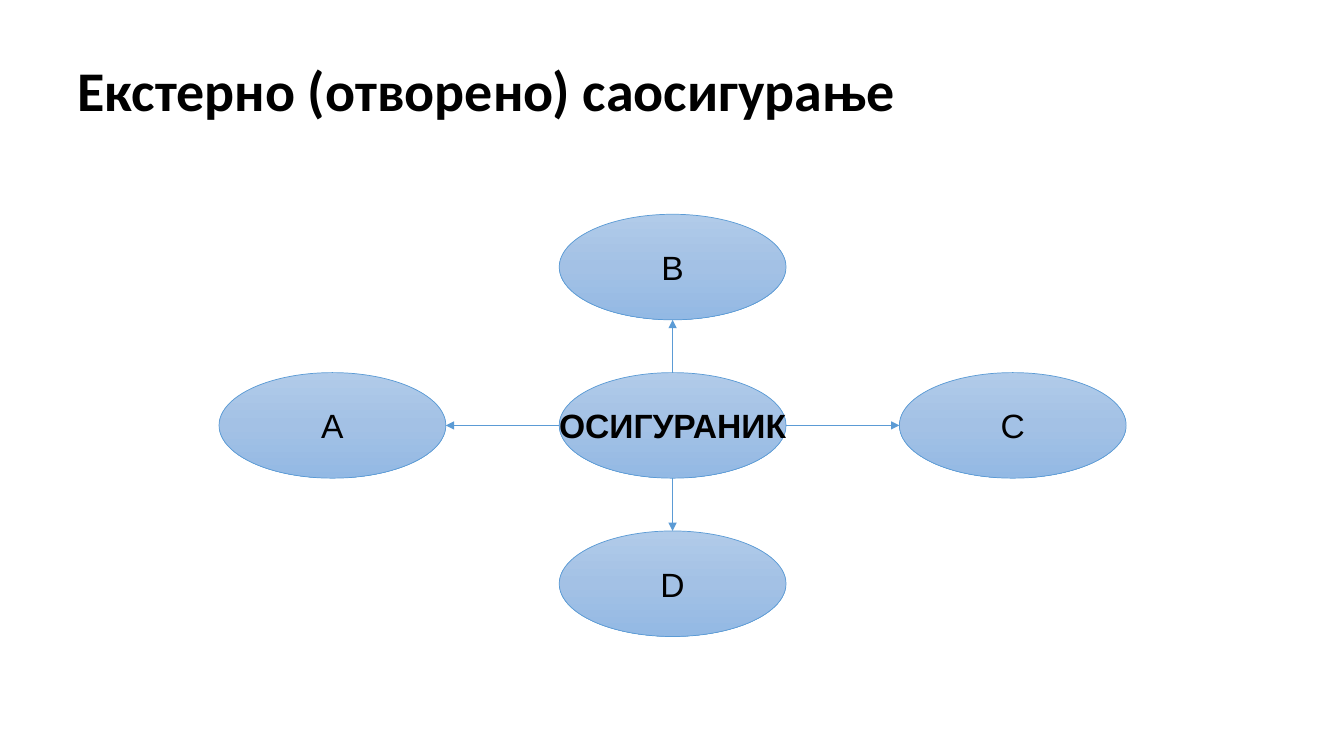
from copy import deepcopy

from lxml import etree
from pptx import Presentation
from pptx.dml.color import RGBColor
from pptx.enum.shapes import MSO_CONNECTOR, MSO_SHAPE
from pptx.enum.text import MSO_ANCHOR, MSO_AUTO_SIZE, PP_ALIGN
from pptx.oxml.ns import qn
from pptx.util import Cm, Pt

ELLIPSE = MSO_SHAPE.OVAL
STRAIGHT = MSO_CONNECTOR.STRAIGHT
MIDDLE = MSO_ANCHOR.MIDDLE
NO_FIT = MSO_AUTO_SIZE.NONE
LEFT, CENTER = PP_ALIGN.LEFT, PP_ALIGN.CENTER

BLACK, BLUE = "000000", "5B9BD5"
GRADIENT = [(0, "B1CBE9"), (0.5, "A3C1E5"), (1, "93B9E4")]
INSURED = "ОСИГУРАНИК"
INSURERS = [("B", 0, -1), ("C", 1, 0), ("D", 0, 1), ("A", -1, 0)]


def color(hex_code):
    """Return the colour for a hex string."""
    return RGBColor.from_string(hex_code)


def write(shape, text, *, size, font, bold=False, align=LEFT, spacing=1.0):
    """Write one formatted, vertically centred paragraph into a shape."""
    frame = shape.text_frame
    frame.auto_size = NO_FIT
    frame.vertical_anchor = MIDDLE
    para = frame.paragraphs[0]
    para.alignment = align
    para.line_spacing = spacing
    span = para.add_run()
    span.text = text
    span.font.size = Pt(size)
    span.font.name = font
    span.font.bold = bold
    span.font.color.rgb = color(BLACK)


def outline(line):
    """Give a line the thin blue stroke."""
    line.color.rgb = color(BLUE)
    line.width = Pt(0.5)


def add_title(page, text, left, top, width, height):
    """Place and fill the title placeholder."""
    title = page.shapes.title
    title.left, title.top = Cm(left), Cm(top)
    title.width, title.height = Cm(width), Cm(height)
    write(title, text, size=40, font="Calibri", bold=True, spacing=0.9)


def add_node(page, text, center_x, center_y, width, height, bold=False):
    """Draw a labelled gradient ellipse around a centre."""
    node = page.shapes.add_shape(
        ELLIPSE, Cm(center_x - width / 2), Cm(center_y - height / 2),
        Cm(width), Cm(height))
    node.shadow.inherit = False
    node.fill.gradient()
    node.fill.gradient_angle = 270
    stop_list = node._element.spPr.find(".//" + qn("a:gsLst"))
    stop_list.insert(1, deepcopy(stop_list[0]))
    for stop, (position, hex_code) in zip(node.fill.gradient_stops, GRADIENT):
        stop.position = position
        stop.color.rgb = color(hex_code)
    outline(node.line)
    frame = node.text_frame
    frame.margin_left = frame.margin_right = 0
    frame.margin_top = frame.margin_bottom = 0
    frame.word_wrap = False
    write(node, text, size=24, font="Arial", bold=bold, align=CENTER)


def add_arrow(page, start_x, start_y, end_x, end_y):
    """Draw a thin arrow between two points."""
    arrow = page.shapes.add_connector(
        STRAIGHT, Cm(start_x), Cm(start_y), Cm(end_x), Cm(end_y))
    outline(arrow.line)
    etree.SubElement(arrow.line._get_or_add_ln(), qn("a:tailEnd"), type="triangle")
    etree.SubElement(arrow._element.spPr, qn("a:effectLst"))


def add_radial_diagram(page, left, top, width, height):
    """Draw the insured in the middle of a box with the insurers around it."""
    center_x, center_y = left + width / 2, top + height / 2
    node_width, node_height = width / 4, height / 4
    for name, across, down in INSURERS:
        step_x, step_y = across * node_width, down * node_height
        add_arrow(page, center_x + step_x / 2, center_y + step_y / 2,
                  center_x + step_x, center_y + step_y)
        add_node(page, name, center_x + 1.5 * step_x, center_y + 1.5 * step_y,
                 node_width, node_height)
    add_node(page, INSURED, center_x, center_y, node_width, node_height, bold=True)


def main():
    """Build and save the deck."""
    deck = Presentation()
    deck.slide_width, deck.slide_height = Cm(33.87), Cm(19.05)
    page = deck.slides.add_slide(deck.slide_layouts[5])
    add_title(page, "Екстерно (отворено) саосигурање", 1.7, 0.76, 30.48, 3.18)
    add_radial_diagram(page, 5.52, 5.4, 22.86, 10.64)
    deck.save("out.pptx")


if __name__ == "__main__":
    main()
